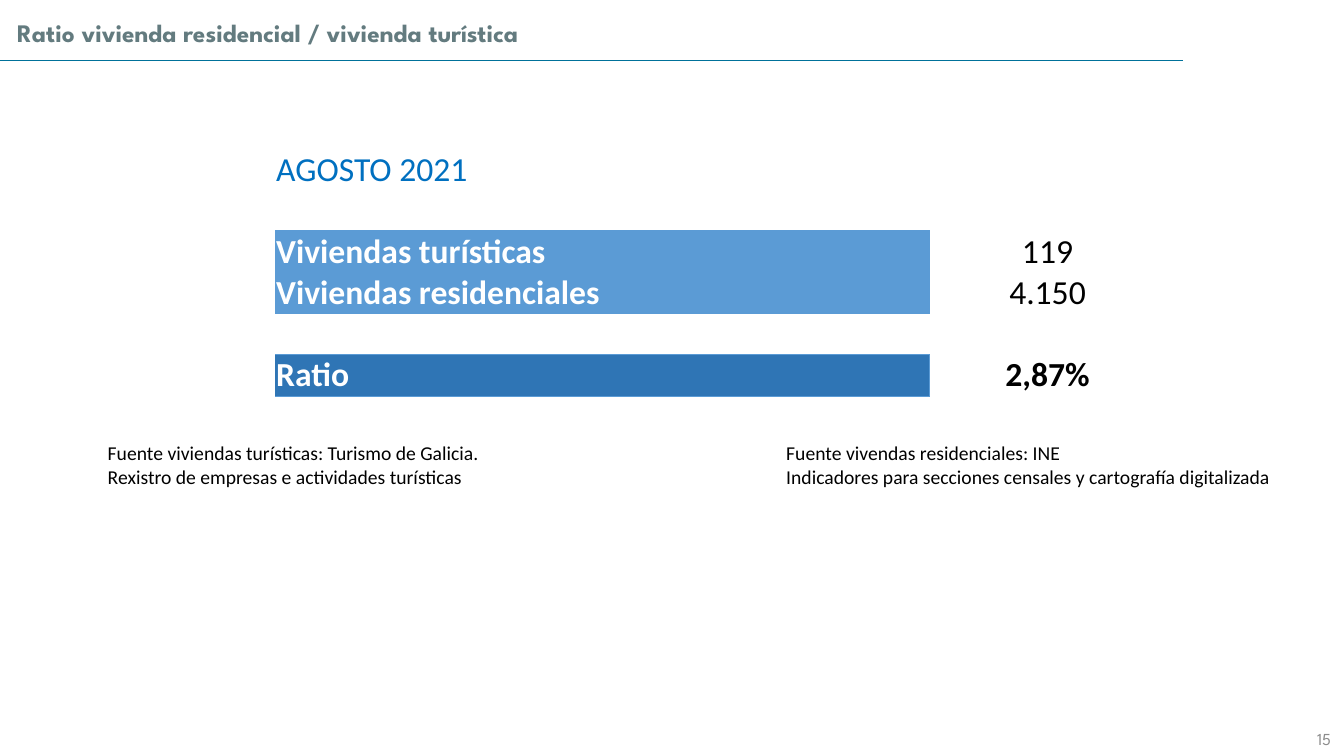
from lxml import etree
from pptx import Presentation
from pptx.dml.color import RGBColor
from pptx.enum.shapes import MSO_CONNECTOR
from pptx.enum.text import MSO_ANCHOR, PP_ALIGN
from pptx.oxml.ns import qn
from pptx.util import Inches, Pt

LEFT, CENTER, RIGHT = PP_ALIGN.LEFT, PP_ALIGN.CENTER, PP_ALIGN.RIGHT
TOP, MIDDLE, BOTTOM = MSO_ANCHOR.TOP, MSO_ANCHOR.MIDDLE, MSO_ANCHOR.BOTTOM
STRAIGHT = MSO_CONNECTOR.STRAIGHT

COLORS = {
    "rule": "00719A",
    "title": "637B7F",
    "page": "8C8C8C",
    "period": "0070C0",
    "black": "000000",
    "white": "FFFFFF",
    "homes": "5B9BD5",
    "ratio": "2F75B5",
}
HEADING_FONT, BODY_FONT = "League Spartan", "Calibri"
NO_TABLE_STYLE = "{2D5ABB26-0587-4C30-8999-92F81FD0307C}"

ROW_HEIGHT = 0.41
# label, value, label fill, value in bold, value anchor
RATIO_ROWS = [
    ("Viviendas turísticas", "119", "homes", False, BOTTOM),
    ("Viviendas residenciales", "4.150", "homes", False, BOTTOM),
    None,
    ("Ratio", "2,87%", "ratio", True, MIDDLE),
    None,
]
SOURCES = [
    (0.97, 6.82, ["Fuente viviendas turísticas: Turismo de Galicia.",
                  "Rexistro de empresas e actividades turísticas"]),
    (7.7, 5.2, ["Fuente vivendas residenciales: INE",
                "Indicadores para secciones censales y cartografía digitalizada"]),
]


def rgb(name):
    return RGBColor.from_string(COLORS[name])


def write_text(frame, *lines, size, color="black", font=BODY_FONT, bold=False,
               align=LEFT, spacing=None, space_after=None):
    for index, line in enumerate(lines):
        paragraph = frame.add_paragraph() if index else frame.paragraphs[0]
        paragraph.alignment = align
        paragraph.line_spacing = spacing
        paragraph.space_after = space_after
        run = paragraph.add_run()
        run.text = line
        run.font.size = Pt(size)
        run.font.name = font
        run.font.bold = bold
        run.font.color.rgb = rgb(color)


def add_text_box(slide, left, top, width, height, *lines, anchor=TOP, **text_format):
    box = slide.shapes.add_textbox(Inches(left), Inches(top), Inches(width), Inches(height))
    box.text_frame.word_wrap = True
    box.text_frame.vertical_anchor = anchor
    write_text(box.text_frame, *lines, **text_format)


def add_rule(slide):
    rule = slide.shapes.add_connector(STRAIGHT, 0, Inches(0.6), Inches(11.73), Inches(0.6))
    rule.line.color.rgb = rgb("rule")
    rule.line.width = Pt(1)
    etree.SubElement(rule.element.spPr, qn("a:effectLst"))


def add_plain_table(slide, left, top, widths, heights):
    frame = slide.shapes.add_table(len(heights), len(widths), Inches(left), Inches(top),
                                   Inches(sum(widths)), Inches(sum(heights)))
    table = frame.table
    table.first_row = table.horz_banding = False
    table._tbl.tblPr.find(qn("a:tableStyleId")).text = NO_TABLE_STYLE
    for column, width in zip(table.columns, widths):
        column.width = Inches(width)
    for row, height in zip(table.rows, heights):
        row.height = Inches(height)
    return table


def add_border(cell, side):
    properties = cell._tc.get_or_add_tcPr()
    line = etree.SubElement(properties, qn(f"a:ln{side}"), w=str(Pt(0.5)))
    fill = etree.SubElement(line, qn("a:solidFill"))
    etree.SubElement(fill, qn("a:srgbClr"), val=COLORS["homes"])


def format_cell(cell, anchor=BOTTOM, fill=None, borders="", side_margin=0.01):
    cell.margin_left = cell.margin_right = Inches(side_margin)
    cell.margin_top = cell.margin_bottom = 0
    cell.vertical_anchor = anchor
    for side in borders:
        add_border(cell, side)
    if fill:
        cell.fill.solid()
        cell.fill.fore_color.rgb = rgb(fill)
    else:
        cell.fill.background()


def add_heading_table(slide, text):
    cell = add_plain_table(slide, 0.12, 0.19, [8.14], [0.31]).cell(0, 0)
    format_cell(cell, MIDDLE, fill="white", side_margin=0.05)
    write_text(cell.text_frame, text, size=18, color="title", font=HEADING_FONT,
               bold=True, spacing=1.15, space_after=Pt(10))


def add_ratio_table(slide):
    heights = [0.81] + [ROW_HEIGHT] * len(RATIO_ROWS)
    table = add_plain_table(slide, 2.73, 1.48, [6.49, 2.34], heights)
    period = table.cell(0, 0)
    format_cell(period, TOP)
    format_cell(table.cell(0, 1))
    write_text(period.text_frame, "AGOSTO 2021", size=24, color="period")
    for index, content in enumerate(RATIO_ROWS, start=1):
        label_cell, value_cell = table.cell(index, 0), table.cell(index, 1)
        if content is None:
            format_cell(label_cell)
            format_cell(value_cell)
            continue
        label, value, fill, bold, anchor = content
        format_cell(label_cell, fill=fill, borders="RT")
        format_cell(value_cell, anchor, borders="L")
        write_text(label_cell.text_frame, label, size=24, color="white", bold=True)
        write_text(value_cell.text_frame, value, size=24, bold=bold, align=CENTER)


def main():
    presentation = Presentation()
    presentation.slide_width, presentation.slide_height = Inches(13.33), Inches(7.5)
    slide = presentation.slides.add_slide(presentation.slide_layouts[6])
    add_rule(slide)
    add_heading_table(slide, "Ratio vivienda residencial / vivienda turística")
    add_ratio_table(slide)
    for left, width, lines in SOURCES:
        add_text_box(slide, left, 4.33, width, 0.57, *lines, size=14)
    add_text_box(slide, 10.3, 7.08, 3, 0.4, "15", anchor=BOTTOM, size=12,
                 color="page", font=HEADING_FONT, align=RIGHT)
    presentation.save("out.pptx")


if __name__ == "__main__":
    main()
